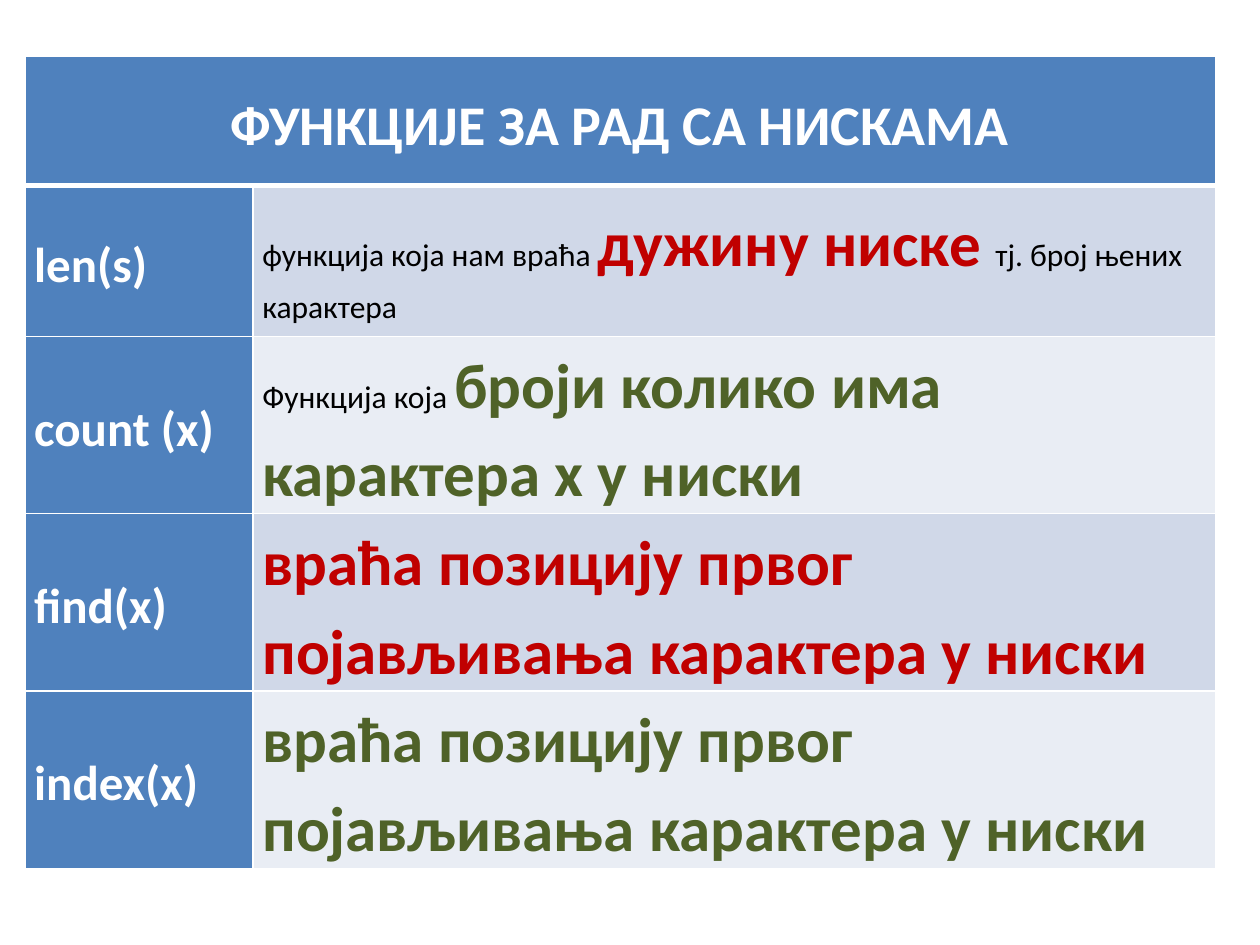
from lxml import etree
from pptx import Presentation
from pptx.dml.color import RGBColor
from pptx.enum.text import MSO_ANCHOR, PP_ALIGN
from pptx.oxml.ns import qn
from pptx.util import Cm, Pt

MIDDLE = MSO_ANCHOR.MIDDLE
LEFT, CENTER = PP_ALIGN.LEFT, PP_ALIGN.CENTER
FONT = "Calibri"
WHITE, BLACK, BLUE = "FFFFFF", "000000", "4F81BD"
RED, GREEN = "C00000", "4F6228"
BANDS = ("D0D8E8", "E9EDF4")
TITLE = "ФУНКЦИЈЕ ЗА РАД СА НИСКАМА"
POSITION = "враћа позицију првог појављивања карактера у ниски"
FUNCTIONS = [
    ("len(s)", [("функција која нам враћа ", 18, BLACK, False),
                ("дужину ниске ", 36, RED, True),
                ("тј. број њених карактера", 18, BLACK, False)]),
    ("count (x)", [("Функција која ", 18, BLACK, False),
                   ("броји колико има карактера x у ниски", 36, GREEN, True)]),
    ("find(x)", [(POSITION, 36, RED, True)]),
    ("index(x)", [(POSITION, 36, GREEN, True)]),
]


def color(value):
    return RGBColor.from_string(value)


def set_borders(cell, bottom=1):
    tc_pr = cell._tc.get_or_add_tcPr()
    widths = {"a:lnL": 1, "a:lnR": 1, "a:lnT": 1, "a:lnB": bottom}
    for i, (tag, width) in enumerate(widths.items()):
        ln = etree.Element(qn(tag), w=str(Pt(width)))
        fill = etree.SubElement(ln, qn("a:solidFill"))
        etree.SubElement(fill, qn("a:srgbClr"), val=WHITE)
        tc_pr.insert(i, ln)


def fill_cell(cell, runs, fill, align=LEFT, bottom=1):
    cell.fill.solid()
    cell.fill.fore_color.rgb = color(fill)
    cell.vertical_anchor = MIDDLE
    cell.margin_left = cell.margin_right = Cm(0.19)
    cell.margin_top = cell.margin_bottom = 0
    set_borders(cell, bottom)
    p = cell.text_frame.paragraphs[0]
    p.alignment = align
    p.line_spacing = 1.15
    for text, size, ink, bold in runs:
        r = p.add_run()
        r.text = text
        r.font.name = FONT
        r.font.size = Pt(size)
        r.font.bold = bold
        r.font.color.rgb = color(ink)


def add_function_table(s):
    heights = [2.6] + [3.04] * len(FUNCTIONS)
    widths = [4.6, 19.4]
    table = s.shapes.add_table(len(heights), len(widths), Cm(0.5), Cm(1.14),
                               Cm(sum(widths)), Cm(sum(heights))).table
    for column, width in zip(table.columns, widths):
        column.width = Cm(width)
    for row, height in zip(table.rows, heights):
        row.height = Cm(height)
    title = table.cell(0, 0)
    title.merge(table.cell(0, 1))
    fill_cell(title, [(TITLE, 32, WHITE, True)], BLUE, CENTER, 3)
    set_borders(table.cell(0, 1), 3)
    for i, (name, runs) in enumerate(FUNCTIONS):
        fill_cell(table.cell(i + 1, 0), [(name, 28, WHITE, True)], BLUE)
        fill_cell(table.cell(i + 1, 1), runs, BANDS[i % 2])


def main():
    prs = Presentation()
    prs.slide_width, prs.slide_height = Cm(25.4), Cm(19.05)
    s = prs.slides.add_slide(prs.slide_layouts[6])
    add_function_table(s)
    prs.save("out.pptx")


if __name__ == "__main__":
    main()
